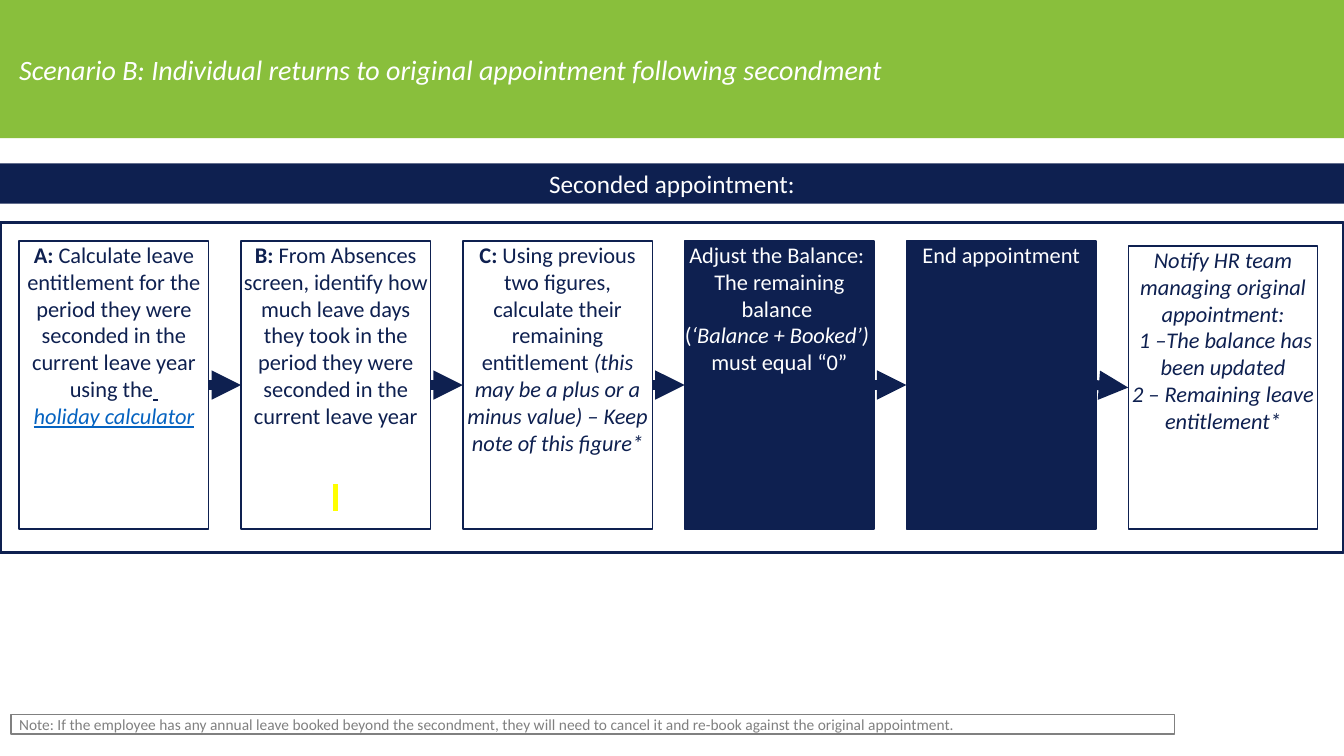
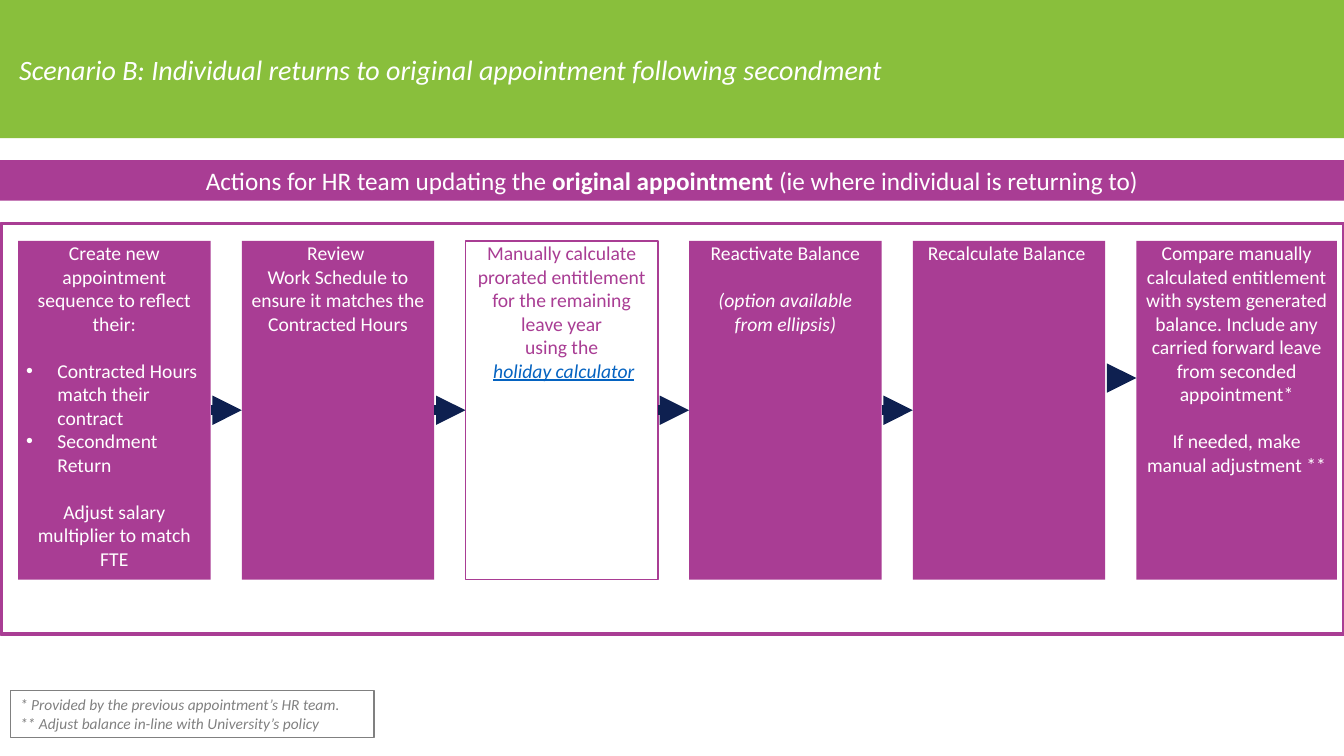
import dataclasses
import itertools

import lxml.etree
import pptx
import pptx.dml.color
import pptx.enum.shapes
import pptx.enum.text
import pptx.oxml.ns
import pptx.util


@dataclasses.dataclass(frozen=True)
class Theme:
    """Colours, type and line sizes shared by the slides."""
    green: str = "89BF3C"
    navy: str = "0E2050"
    purple: str = "A93D94"
    grey: str = "808080"
    white: str = "FFFFFF"
    link: str = "0563C1"
    marker: str = "FFFF00"
    font: str = "Calibri"
    title_size: int = 20
    band_size: int = 18
    note_size: int = 11
    frame_line: float = 2.25
    card_line: float = 1
    arrow_line: float = 7


THEME = Theme()
CENTER = pptx.enum.text.PP_ALIGN.CENTER
LEFT = pptx.enum.text.PP_ALIGN.LEFT


@dataclasses.dataclass(frozen=True)
class Box:
    """A rectangle in inches."""
    left: float
    top: float
    width: float
    height: float

    def columns(self, count, gap):
        """Split the box into equal columns."""
        width = (self.width - gap * (count - 1)) / count
        return [Box(self.left + i * (width + gap), self.top, width, self.height)
                for i in range(count)]

    def emu(self):
        """Give left, top, width and height as slide lengths."""
        return [pptx.util.Inches(length) for length in dataclasses.astuple(self)]


PAGE = Box(0, 0, 13.33, 7.5)


@dataclasses.dataclass(frozen=True)
class Para:
    """A paragraph: runs of (text, style letters), where b, i, u, l and h mean
    bold, italic, underlined, link colour and highlighted."""
    runs: tuple
    lines_before: int = 0
    bullet: bool = False
    align: int = CENTER


@dataclasses.dataclass(frozen=True)
class Card:
    """One step of a flow."""
    paras: list
    filled: bool = True
    drop: float = 0
    widen: float = 0


def para(text, style="", **options):
    """Make a paragraph of a single run."""
    return Para(((text, style),), **options)


def rgb(code):
    """Turn a hex code into a colour."""
    return pptx.dml.color.RGBColor.from_string(code)


def style_font(font, letters):
    """Apply style letters to a font."""
    if "b" in letters:
        font.bold = True
    if "i" in letters:
        font.italic = True
    if "u" in letters:
        font.underline = True
    if "l" in letters:
        font.color.rgb = rgb(THEME.link)


def highlight(run):
    """Mark a run with the highlighter colour."""
    mark = lxml.etree.SubElement(run.font._element, pptx.oxml.ns.qn("a:highlight"))
    lxml.etree.SubElement(mark, pptx.oxml.ns.qn("a:srgbClr"), val=THEME.marker)


def add_bullet(paragraph):
    """Give a paragraph a hanging bullet."""
    properties = paragraph._p.get_or_add_pPr()
    indent = pptx.util.Inches(0.31)
    properties.set("marL", str(indent))
    properties.set("indent", str(-indent))
    lxml.etree.SubElement(properties, pptx.oxml.ns.qn("a:buFont"), typeface="Arial")
    lxml.etree.SubElement(properties, pptx.oxml.ns.qn("a:buChar"), char="•")


def write(frame, paras, size, color):
    """Fill a text frame with paragraphs."""
    for index, content in enumerate(paras):
        paragraph = frame.add_paragraph() if index else frame.paragraphs[0]
        paragraph.alignment = content.align
        if content.bullet:
            add_bullet(paragraph)
        if content.lines_before:
            paragraph.space_before = pptx.util.Pt(content.lines_before * size * 1.2)
        paragraph.font.name = THEME.font
        paragraph.font.size = pptx.util.Pt(size)
        paragraph.font.color.rgb = rgb(color)
        shared = set.intersection(*(set(style) for _, style in content.runs))
        style_font(paragraph.font, shared)
        for text, style in content.runs:
            run = paragraph.add_run()
            run.text = text
            style_font(run.font, set(style) - shared)
            if "h" in style:
                highlight(run)


def add_panel(slide, box, fill=None, line=None, weight=1, paras=(), size=0,
              color=None, insets=(0, 0), middle=False):
    """Add a rectangle with optional fill, outline and text."""
    panel = slide.shapes.add_shape(
        pptx.enum.shapes.MSO_SHAPE.RECTANGLE, *box.emu())
    panel.shadow.inherit = False
    if fill:
        panel.fill.solid()
        panel.fill.fore_color.rgb = rgb(fill)
    else:
        panel.fill.background()
    if line:
        panel.line.color.rgb = rgb(line)
        panel.line.width = pptx.util.Pt(weight)
    else:
        panel.line.fill.background()
    frame = panel.text_frame
    frame.word_wrap = True
    frame.margin_left = frame.margin_right = pptx.util.Inches(insets[0])
    frame.margin_top = frame.margin_bottom = pptx.util.Inches(insets[1])
    anchors = pptx.enum.text.MSO_ANCHOR
    frame.vertical_anchor = anchors.MIDDLE if middle else anchors.TOP
    write(frame, paras, size, color)
    return panel


def add_title(slide, box):
    """Add the green title banner."""
    title = "Scenario B: Individual returns to original appointment following secondment"
    add_panel(slide, box, fill=THEME.green, paras=[para(title, "i", align=LEFT)],
              size=THEME.title_size, color=THEME.white, insets=(0.19, 0), middle=True)


def add_band(slide, box, accent, heading):
    """Add the coloured heading band."""
    add_panel(slide, box, fill=accent, paras=[heading], size=THEME.band_size,
              color=THEME.white, insets=(0.1, 0.05), middle=True)


def add_note(slide, box, paras, weight, insets):
    """Add the outlined footnote."""
    add_panel(slide, box, line=THEME.grey, weight=weight, paras=paras,
              size=THEME.note_size, color=THEME.grey, insets=insets)


def add_arrow(slide, start=(0, 0), end=(0, 0)):
    """Add a thick navy arrow between two points."""
    points = [pptx.util.Inches(length) for length in (*start, *end)]
    arrow = slide.shapes.add_connector(
        pptx.enum.shapes.MSO_CONNECTOR.STRAIGHT, *points)
    arrow.line.color.rgb = rgb(THEME.navy)
    arrow.line.width = pptx.util.Pt(THEME.arrow_line)
    lxml.etree.SubElement(arrow.line._get_or_add_ln(),
                          pptx.oxml.ns.qn("a:tailEnd"), type="triangle")
    lxml.etree.SubElement(arrow._element.spPr, pptx.oxml.ns.qn("a:effectLst"))
    return arrow


def add_flow(slide, box, gap, cards, accent, outline, size, inset):
    """Add a row of step cards and return their panels."""
    panels = []
    for card, cell in zip(cards, box.columns(len(cards), gap)):
        place = Box(cell.left, cell.top + card.drop, cell.width + card.widen,
                    cell.height - card.drop)
        panels.append(add_panel(
            slide, place, fill=accent if card.filled else None,
            line=accent if outline or not card.filled else None,
            weight=THEME.card_line, paras=card.paras, size=size,
            color=THEME.white if card.filled else accent, insets=(inset, 0)))
    return panels


def join(slide, panels):
    """Join neighbouring cards with arrows."""
    for before, after in itertools.pairwise(panels):
        arrow = add_arrow(slide)
        arrow.begin_connect(before, 3)
        arrow.end_connect(after, 1)


def add_base(deck, accent, heading, band_top, frame):
    """Start a slide with title, heading band and frame."""
    slide = deck.slides.add_slide(deck.slide_layouts[6])
    add_title(slide, Box(0, 0, PAGE.width, 1.37))
    add_band(slide, Box(0, band_top, PAGE.width, 0.4), accent, heading)
    add_panel(slide, frame, line=accent, weight=THEME.frame_line)
    return slide


def add_seconded_slide(deck):
    """Build the slide on the seconded appointment."""
    slide = add_base(deck, THEME.navy, para("Seconded appointment:"), 1.62,
                     Box(0, 2.21, PAGE.width, 3.27))
    cards = [
        Card([Para((("A: ", "b"), ("Calculate leave entitlement for the period they "
                                   "were seconded in the current leave year", ""))),
              Para((("using the", ""), (" ", "iu"))),
              para("holiday calculator", "iul")], filled=False),
        Card([Para((("B: ", "b"), ("From Absences screen, identify how much leave days "
                                   "they took in the period they were seconded in the "
                                   "current leave year", ""))),
              para(" ", "h", lines_before=2)], filled=False),
        Card([Para((("C:", "b"), (" Using previous two figures, calculate their "
                                  "remaining entitlement ", ""),
                    ("(this may be a plus or a minus value) – Keep note of this "
                     "figure*", "i")))], filled=False),
        Card([para("Adjust the Balance: "), para("The remaining balance "),
              Para((("(", ""), ("‘Balance + Booked’) ", "i"))),
              para("must equal “0”")]),
        Card([para("End appointment")]),
        Card([para("Notify HR team managing original appointment:", "i"),
              para(" 1 –The balance has been updated", "i"),
              para("2 – Remaining leave entitlement*", "i")], filled=False, drop=0.05),
    ]
    join(slide, add_flow(slide, Box(0.19, 2.39, 12.88, 2.86), 0.32, cards,
                         THEME.navy, outline=True, size=16, inset=0))
    note = ("Note: If the employee has any annual leave booked beyond the secondment, "
            "they will need to cancel it and re-book against the original appointment.")
    add_note(slide, Box(0.11, 7.09, 11.54, 0.19), [para(note, align=LEFT)],
             weight=1, insets=(0.08, 0))


def add_original_slide(deck):
    """Build the slide on the original appointment."""
    heading = Para((("Actions for HR team updating the ", ""),
                    ("original appointment ", "b"),
                    ("(ie where individual is returning to)", "")))
    slide = add_base(deck, THEME.purple, heading, 1.59, Box(0.01, 2.22, 13.32, 4.07))
    cards = [
        Card([para("Create new appointment sequence to reflect their:"),
              para("Contracted Hours match their contract", lines_before=1,
                   bullet=True, align=LEFT),
              para("Secondment Return", bullet=True, align=LEFT),
              para("Adjust salary multiplier to match FTE", lines_before=1)]),
        Card([para("Review "),
              para("Work Schedule to ensure it matches the Contracted Hours")]),
        Card([para("Manually calculate prorated entitlement for the remaining leave "
                   "year"),
              para("using the"),
              Para(((" ", "i"), ("holiday calculator", "iul")))], filled=False),
        Card([para("Reactivate Balance"),
              para("(option available from ellipsis)", "i", lines_before=1)]),
        Card([para("Recalculate Balance ")]),
        Card([para("Compare manually calculated entitlement with system generated "
                   "balance. Include any carried forward leave from seconded "
                   "appointment*"),
              para("If needed, make manual adjustment **", lines_before=1)],
             widen=0.08),
    ]
    panels = add_flow(slide, Box(0.18, 2.39, 13, 3.36), 0.31, cards, THEME.purple,
                      outline=False, size=14, inset=0.08)
    join(slide, panels[:-1])
    add_arrow(slide, (11.07, 3.75), (11.27, 3.75))
    add_note(slide, Box(0.1, 6.85, 3.61, 0.47),
             [para("* Provided by the previous appointment’s HR team.", "i", align=LEFT),
              para("** Adjust balance in-line with University’s policy", "i",
                   align=LEFT)], weight=0.75, insets=(0.1, 0.05))


def main():
    """Build and save the deck."""
    deck = pptx.Presentation()
    deck.slide_width = pptx.util.Inches(PAGE.width)
    deck.slide_height = pptx.util.Inches(PAGE.height)
    add_seconded_slide(deck)
    add_original_slide(deck)
    deck.save("out.pptx")


if __name__ == "__main__":
    main()
